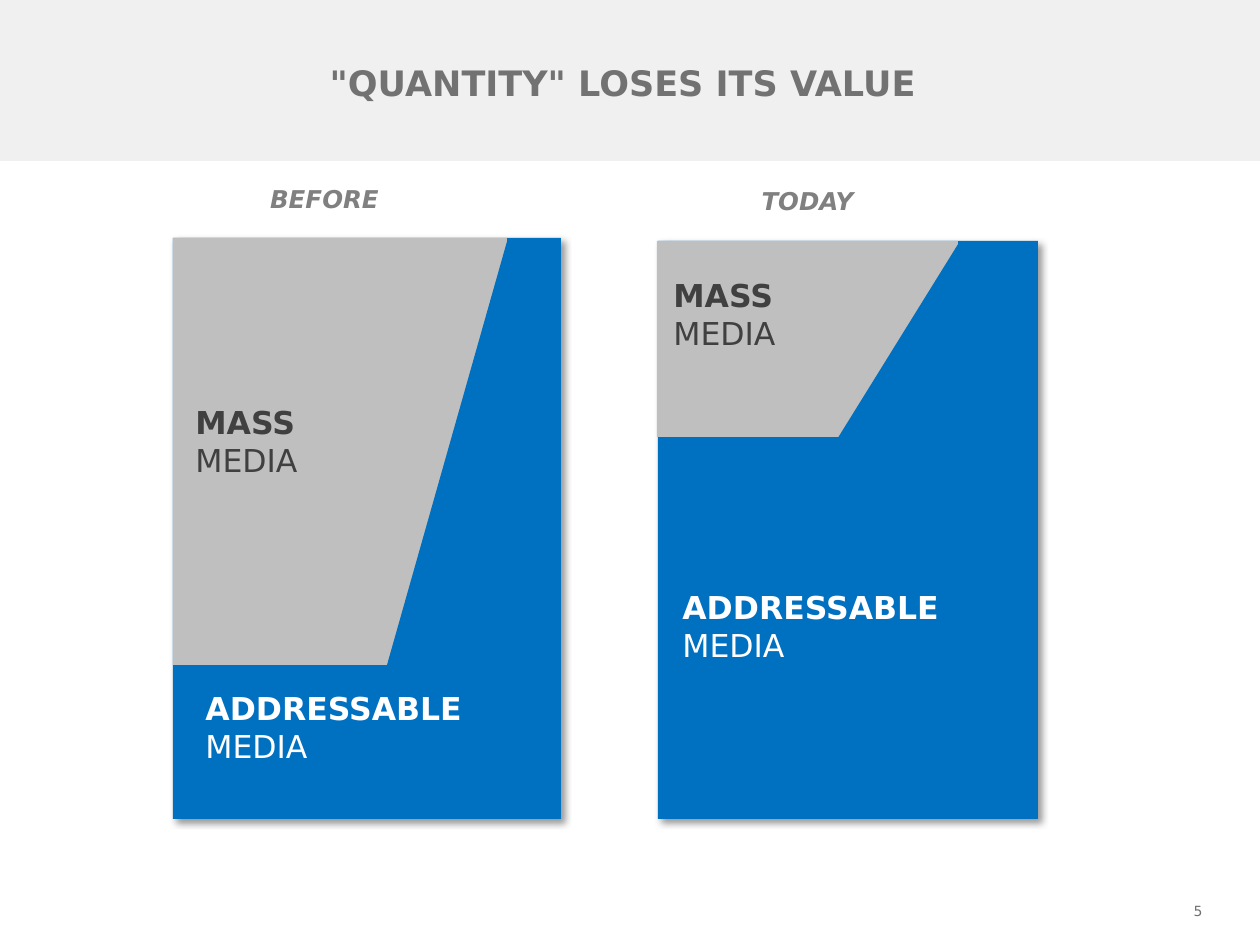
from lxml.etree import SubElement
from pptx import Presentation
from pptx.dml.color import RGBColor
from pptx.enum.shapes import MSO_SHAPE as Preset
from pptx.enum.text import MSO_ANCHOR as Anchor, PP_ALIGN as Align
from pptx.oxml.ns import qn
from pptx.util import Pt

PX = 914400 / 126
FONT = "DejaVu Sans"
BLUE = RGBColor(0x00, 0x70, 0xC0)
SILVER = RGBColor(0xBF, 0xBF, 0xBF)
BAND = RGBColor(0xF0, 0xF0, 0xF0)
TITLE_GREY = RGBColor(0x72, 0x72, 0x72)
CAPTION_GREY = RGBColor(0x80, 0x80, 0x80)
DARK = RGBColor(0x40, 0x40, 0x40)
WHITE = RGBColor(0xFF, 0xFF, 0xFF)

TITLE = "\"QUANTITY\" LOSES ITS VALUE"
TITLE_BOX = (174, 18, 1086, 129)
TITLE_INDENT = 143
PAGE_NUMBER = "5"
MASS = ("MASS", "MEDIA")
ADDRESSABLE = ("ADDRESSABLE", "MEDIA")
LABEL_SIZE = (294, 89)
CAPTION_SIZE = (183, 43)

PANELS = [
    {"caption": "BEFORE", "caption_at": (233, 178),
     "panel": (173, 238, 388, 581), "mass": (173, 238, 334, 427),
     "slope": (387, 238, 121, 427),
     "mass_at": (183, 397), "addressable_at": (193, 683)},
    {"caption": "TODAY", "caption_at": (716, 180),
     "panel": (658, 241, 380, 578), "mass": (657, 241, 301, 196),
     "slope": (818, 241, 142, 229),
     "mass_at": (661, 270), "addressable_at": (670, 582)},
]


def emu(box):
    return [round(value * PX) for value in box]


def add_block(slide, preset, box, color):
    shape = slide.shapes.add_shape(preset, *emu(box))
    shape.shadow.inherit = False
    shape.fill.solid()
    shape.fill.fore_color.rgb = color
    shape.line.fill.background()
    return shape


def add_shadow(shape):
    effects = shape._element.spPr.find(qn("a:effectLst"))
    shadow = SubElement(effects, qn("a:outerShdw"), blurRad=str(Pt(4)),
                        dist=str(Pt(3)), dir="2700000", algn="tl", rotWithShape="0")
    color = SubElement(shadow, qn("a:srgbClr"), val="000000")
    SubElement(color, qn("a:alpha"), val="40000")


def add_run(paragraph, text, size, color, bold=False, italic=False):
    run = paragraph.add_run()
    run.text = text
    run.font.name = FONT
    run.font.size = Pt(size)
    run.font.color.rgb = color
    run.font.bold = bold
    run.font.italic = italic


def add_text(slide, box, lines, align=Align.LEFT):
    frame = slide.shapes.add_textbox(*emu(box)).text_frame
    frame.word_wrap = True
    for index, line in enumerate(lines):
        paragraph = frame.add_paragraph() if index else frame.paragraphs[0]
        paragraph.alignment = align
        add_run(paragraph, *line)


def add_label(slide, position, words, color):
    strong, plain = words
    add_text(slide, position + LABEL_SIZE,
             [(strong, 18, color, True), (plain, 18, color)])


def add_title(slide):
    title = slide.shapes.title
    title.left, title.top, title.width, title.height = emu(TITLE_BOX)
    title.text_frame.vertical_anchor = Anchor.MIDDLE
    paragraph = title.text_frame.paragraphs[0]
    paragraph.alignment = Align.LEFT
    paragraph._p.get_or_add_pPr().set("marL", str(round(TITLE_INDENT * PX)))
    add_run(paragraph, TITLE, 20, TITLE_GREY, True)
    band = add_block(slide, Preset.RECTANGLE, (0, 0, 1260, 161), BAND)
    title._element.addprevious(band._element)


def add_panel(slide, panel):
    add_shadow(add_block(slide, Preset.RECTANGLE, panel["panel"], BLUE))
    add_block(slide, Preset.RECTANGLE, panel["mass"], SILVER)
    slope = add_block(slide, Preset.ISOSCELES_TRIANGLE, panel["slope"], BLUE)
    slope.adjustments[0] = 1
    add_label(slide, panel["mass_at"], MASS, DARK)
    add_label(slide, panel["addressable_at"], ADDRESSABLE, WHITE)
    add_text(slide, panel["caption_at"] + CAPTION_SIZE,
             [(panel["caption"], 14, CAPTION_GREY, True, True)], Align.CENTER)


def main():
    presentation = Presentation()
    presentation.slide_width, presentation.slide_height = emu((1260, 945))
    slide = presentation.slides.add_slide(presentation.slide_layouts[5])
    add_title(slide)
    for panel in PANELS:
        add_panel(slide, panel)
    add_text(slide, (1145, 896, 70, 30), [(PAGE_NUMBER, 8, TITLE_GREY)], Align.RIGHT)
    presentation.save("out.pptx")


if __name__ == "__main__":
    main()
